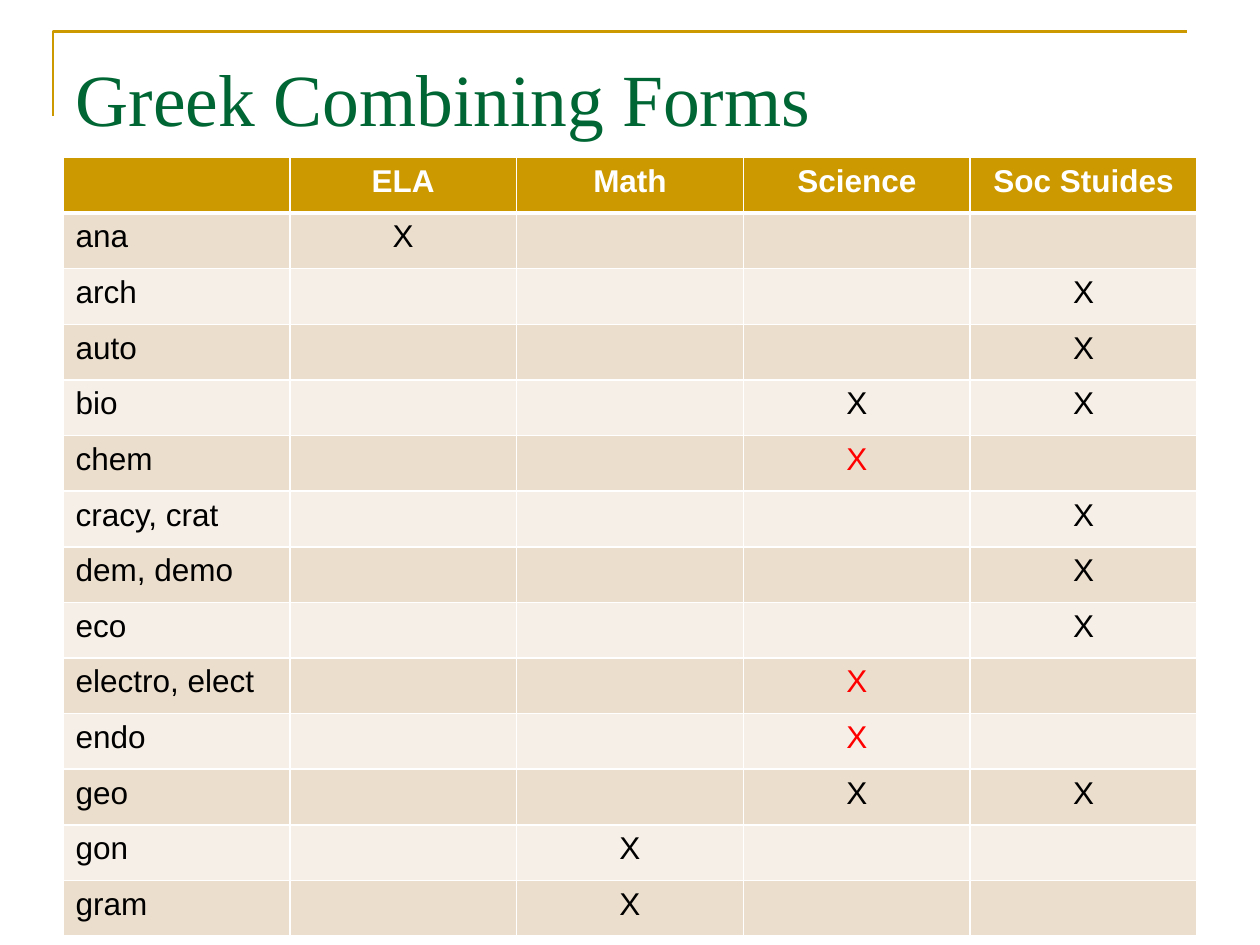
from lxml.etree import SubElement
from pptx import Presentation
from pptx.dml.color import RGBColor
from pptx.enum.text import MSO_ANCHOR as Anchor, PP_ALIGN as Align
from pptx.oxml.ns import qn
from pptx.util import Inches, Pt

# Content: each form with its marks by subject column ("r" marks in red)
TITLE = "Greek Combining Forms"
HEADS = ["", "ELA", "Math", "Science", "Soc Stuides"]
ELA, MATH, SCI, SOC = range(1, 5)
FORMS = [
    ("ana", {ELA: "mark"}),
    ("arch", {SOC: "mark"}),
    ("auto", {SOC: "mark"}),
    ("bio", {SCI: "mark", SOC: "mark"}),
    ("chem", {SCI: "alert"}),
    ("cracy, crat", {SOC: "mark"}),
    ("dem, demo", {SOC: "mark"}),
    ("eco", {SOC: "mark"}),
    ("electro, elect", {SCI: "alert"}),
    ("endo", {SCI: "alert"}),
    ("geo", {SCI: "mark", SOC: "mark"}),
    ("gon", {MATH: "mark"}),
    ("gram", {MATH: "mark"}),
]

THEME = {
    "gold": "CC9900", "title": "006633", "white": "FFFFFF",
    "mark": "000000", "alert": "FF0000", "bands": ["ECDECC", "F6EFE7"],
    "serif": "Times New Roman", "sans": "Arial",
    "title_size": 42, "cell_size": 18,
}
LEFT, TOP, WIDTH, HEIGHT = 0.5, 1.25, 9, 6.18


def color(code):
    return RGBColor.from_string(code)


def add_run(para, text, face, size, code, bold=False):
    run = para.add_run()
    run.text = text
    font = run.font
    font.name, font.size, font.bold = face, Pt(size), bold
    font.color.rgb = color(code)


def set_edges(cell, low):
    """Draw white borders; low is the bottom width in points."""
    props = cell._tc.get_or_add_tcPr()
    edges = [("a:lnL", 1), ("a:lnR", 1), ("a:lnT", 1), ("a:lnB", low)]
    for spot, (tag, width) in enumerate(edges):
        line = props.makeelement(qn(tag), {"w": str(Pt(width))})
        fill = SubElement(line, qn("a:solidFill"))
        SubElement(fill, qn("a:srgbClr"), val=THEME["white"])
        props.insert(spot, line)


def fill_cell(cell, text, fill, code, bold=False, align=Align.CENTER, low=1):
    cell.fill.solid()
    cell.fill.fore_color.rgb = color(fill)
    set_edges(cell, low)
    para = cell.text_frame.paragraphs[0]
    para.alignment = align
    if text:
        add_run(para, text, THEME["sans"], THEME["cell_size"], code, bold)
    else:
        para.font.size = Pt(THEME["cell_size"])


def add_frame(slide):
    points = [(0.42, 0.25), (9.42, 0.25)]
    path = slide.shapes.build_freeform(Inches(0.42), Inches(0.92))
    path.add_line_segments([(Inches(x), Inches(y)) for x, y in points], close=False)
    frame = path.convert_to_shape()
    frame.shadow.inherit = False
    frame.fill.background()
    frame.line.color.rgb = color(THEME["gold"])
    frame.line.width = Pt(1.5)


def add_title(slide):
    title = slide.shapes.title
    title.left, title.top = Inches(LEFT), Inches(0.3)
    title.width, title.height = Inches(WIDTH), Inches(1.25)
    text = title.text_frame
    text.vertical_anchor = Anchor.TOP
    text.margin_top = Inches(0.12)
    para = text.paragraphs[0]
    para.alignment = Align.LEFT
    add_run(para, TITLE, THEME["serif"], THEME["title_size"], THEME["title"])


def add_grid(slide):
    count = len(FORMS) + 1
    table = slide.shapes.add_table(
        count, len(HEADS), Inches(LEFT), Inches(TOP), Inches(WIDTH), Inches(HEIGHT)
    ).table
    for col in table.columns:
        col.width = Inches(WIDTH / len(HEADS))
    for row in table.rows:
        row.height = Inches(HEIGHT / count)

    # Header row
    for col, head in enumerate(HEADS):
        fill_cell(table.cell(0, col), head, THEME["gold"], THEME["white"], bold=True, low=3)

    # One banded row per form
    for row, (form, marks) in enumerate(FORMS, 1):
        band = THEME["bands"][(row - 1) % 2]
        fill_cell(table.cell(row, 0), form, band, THEME["mark"], align=Align.LEFT,)
        for col in range(1, len(HEADS)):
            text = "X" if col in marks else ""
            code = THEME[marks.get(col, "mark")]
            fill_cell(table.cell(row, col), text, band, code)
    # The header keeps its heavy lower edge
    for col in range(len(HEADS)):
        edge = table.cell(1, col)._tc.tcPr.find(qn("a:lnT"))
        edge.set("w", str(Pt(3)))


def main():
    deck = Presentation()
    deck.slide_width, deck.slide_height = Inches(10), Inches(7.5)
    slide = deck.slides.add_slide(deck.slide_layouts[5])
    add_frame(slide)
    add_title(slide)
    add_grid(slide)
    deck.save("out.pptx")


if __name__ == "__main__":
    main()
